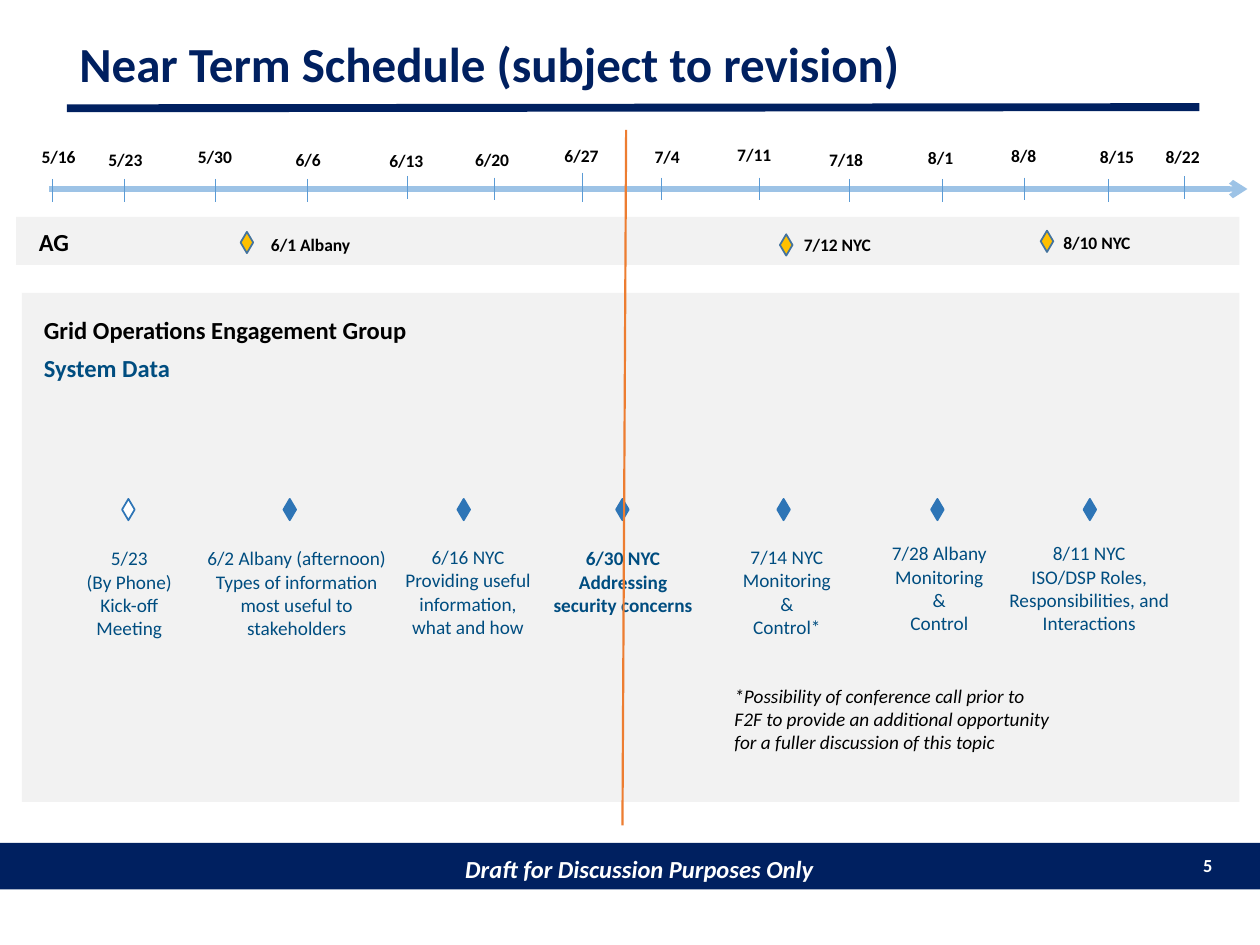
"""Build the near-term schedule slide with its timeline and engagement meetings."""
from dataclasses import dataclass

from lxml.etree import SubElement
from pptx import Presentation
from pptx.dml.color import RGBColor
from pptx.enum.shapes import MSO_CONNECTOR as Connector, MSO_SHAPE as Preset
from pptx.enum.text import MSO_ANCHOR as Anchor, MSO_AUTO_SIZE as AutoSize, PP_ALIGN as Align
from pptx.oxml.ns import qn
from pptx.util import Pt

COLORS = {
    "navy": "002060", "white": "FFFFFF", "black": "000000", "panel": "F2F2F2",
    "axis": "9DC3E6", "tick": "5B9BD5", "gold": "FFC000", "gold_edge": "43739E",
    "meeting": "2E75B6", "text": "004D80", "today": "ED7D31",
}
FONT = "Calibri"
DIAMOND_SIZE = (7.2, 12.2)
MEETING_TOP = 285.1


@dataclass(frozen=True)
class Style:
    size: float
    color: str = "black"
    bold: bool = False
    italic: bool = False
    align: Align = Align.CENTER


@dataclass(frozen=True)
class Week:
    date: str
    label_left: float
    label_top: float
    tick_x: float
    tick_top: float
    tick_height: float = 13


@dataclass(frozen=True)
class AdvisoryMeeting:
    label: str
    label_left: float
    label_top: float
    diamond_left: float
    diamond_top: float


@dataclass(frozen=True)
class GroupMeeting:
    lines: tuple[str, ...]
    left: float
    top: float
    diamond_left: float
    width: float = 130.3
    bold: bool = False
    fill: str = "meeting"


LABEL = Style(10, bold=True)
HEADING = Style(14, bold=True, align=Align.LEFT)

WEEKS = (
    Week("5/16", 15.1, 79.9, 30.2, 102.2),
    Week("5/23", 53.3, 81.4, 71.3, 102.2),
    Week("5/30", 104.4, 79.9, 123.1, 102.2),
    Week("6/6", 157.7, 81.4, 175.7, 102.2),
    Week("6/13", 213.8, 82.1, 232.6, 100.5),
    Week("6/20", 262.8, 81.4, 282.6, 101.5),
    Week("6/27", 313.9, 79.2, 332.6, 98.6, 16.6),
    Week("7/4", 362.9, 79.9, 378, 101.5),
    Week("7/11", 412.6, 78.5, 434.2, 101.5),
    Week("7/18", 465.1, 81.4, 485.3, 102.2),
    Week("8/1", 519.1, 80.6, 538.6, 102.2),
    Week("8/8", 566.6, 79.2, 585.4, 101.5),
    Week("8/15", 619.9, 79.9, 633.6, 102.2),
    Week("8/22", 657.4, 79.9, 676.8, 100.8),
)
ADVISORY_MEETINGS = (
    AdvisoryMeeting("6/1 Albany", 141.8, 130.3, 137.5, 132.5),
    AdvisoryMeeting("7/12 NYC", 442.8, 130.3, 445.7, 133.9),
    AdvisoryMeeting("8/10 NYC", 591.1, 128.9, 594.7, 131.8),
)
GROUP_MEETINGS = (
    GroupMeeting(("5/23", "(By Phone)", "Kick-off Meeting"), 38.2, 308.9, 69.8, 71.3, fill="white"),
    GroupMeeting(("6/2 Albany (afternoon)", "Types of information most useful to stakeholders"),
                 104.4, 308.9, 162),
    GroupMeeting(("6/16 NYC", "Providing useful information,", "what and how"), 202.3, 308.2, 261.4),
    GroupMeeting(("6/30 NYC", "Addressing", "security concerns"), 290.9, 308.9, 352.1, bold=True),
    GroupMeeting(("7/14 NYC", "Monitoring", "&", "Control*"), 384.5, 308.2, 444.2),
    GroupMeeting(("7/28 Albany", "Monitoring", "&", "Control"), 471.6, 306, 532.1),
    GroupMeeting(("8/11 NYC", "ISO/DSP Roles, Responsibilities, and Interactions"),
                 557.3, 306, 619.2),
)


def rgb(name: str) -> RGBColor:
    """Return the named colour."""
    return RGBColor.from_string(COLORS[name])


def write_text(shape, text: str, style: Style) -> None:
    """Fill a shape with text in one style."""
    frame = shape.text_frame
    frame.text = text
    frame.word_wrap = True
    for paragraph in frame.paragraphs:
        paragraph.alignment = style.align
        for run in paragraph.runs:
            font = run.font
            font.name, font.size = FONT, Pt(style.size)
            font.bold, font.italic = style.bold, style.italic
            font.color.rgb = rgb(style.color)


def add_text(slide, box: tuple, text: str, style: Style) -> None:
    """Add a text box given as left, top, width and height."""
    write_text(slide.shapes.add_textbox(*map(Pt, box)), text, style)


def add_block(slide, preset: Preset, box: tuple, fill: str, edge: str | None = None):
    """Add a filled preset shape with an optional outline."""
    shape = slide.shapes.add_shape(preset, *map(Pt, box))
    shape.shadow.inherit = False
    shape.fill.solid()
    shape.fill.fore_color.rgb = rgb(fill)
    if edge:
        shape.line.color.rgb = rgb(edge)
        shape.line.width = Pt(1)
    else:
        shape.line.fill.background()
    return shape


def add_diamond(slide, left: float, top: float, fill: str, edge: str) -> None:
    """Add a meeting marker."""
    add_block(slide, Preset.FLOWCHART_DECISION, (left, top, *DIAMOND_SIZE), fill, edge)


def add_line(slide, ends: tuple, color: str, width: float, arrow: bool = False) -> None:
    """Add a straight line given as start x, start y, end x and end y."""
    line = slide.shapes.add_connector(Connector.STRAIGHT, *map(Pt, ends))
    line.line.color.rgb = rgb(color)
    line.line.width = Pt(width)
    properties = line._element.spPr
    if arrow:
        SubElement(properties.find(qn("a:ln")), qn("a:tailEnd"), type="arrow")
    SubElement(properties, qn("a:effectLst"))


def add_frame(slide) -> None:
    """Add the title, its rule and the footer bar."""
    title = slide.shapes.title
    title.left, title.top, title.width, title.height = map(Pt, (38.2, 18, 647.3, 39.6))
    write_text(title, "Near Term Schedule (subject to revision)",
               Style(28, "navy", bold=True, align=Align.LEFT))
    title.text_frame.auto_size = AutoSize.NONE
    title.text_frame.vertical_anchor = Anchor.MIDDLE
    title.text_frame.paragraphs[0].line_spacing = 0.9
    add_line(slide, (38.2, 61.9, 685.4, 61.2), "navy", 4.5)
    footer = add_block(slide, Preset.RECTANGLE, (0, 481.7, 720, 26.6), "navy")
    write_text(footer, "Draft for Discussion Purposes Only",
               Style(14, "white", bold=True, italic=True))
    footer.text_frame.margin_left = Pt(18)
    footer.text_frame.vertical_anchor = Anchor.BOTTOM
    add_text(slide, (670.3, 484.6, 29.5, 20.9), "5",
             Style(10.5, "white", bold=True, align=Align.RIGHT))


def main() -> None:
    """Build and save the presentation."""
    presentation = Presentation()
    presentation.slide_width, presentation.slide_height = Pt(720), Pt(540)
    slide = presentation.slides.add_slide(presentation.slide_layouts[5])
    add_frame(slide)
    add_block(slide, Preset.RECTANGLE, (12.5, 167.4, 695.7, 290.9), "panel")
    add_block(slide, Preset.RECTANGLE, (9.2, 124, 699, 27.4), "panel")
    add_line(slide, (28.1, 108, 712.8, 108), "axis", 3, arrow=True)
    for week in WEEKS:
        add_line(slide, (week.tick_x, week.tick_top, week.tick_x, week.tick_top + week.tick_height),
                 "tick", 0.5)
        add_text(slide, (week.label_left, week.label_top, 36.7, 19.4), week.date, LABEL)
    add_text(slide, (15.1, 126, 37.4, 24.5), "AG", HEADING)
    for meeting in ADVISORY_MEETINGS:
        add_diamond(slide, meeting.diamond_left, meeting.diamond_top, "gold", "gold_edge")
        add_text(slide, (meeting.label_left, meeting.label_top, 71.3, 19.4), meeting.label, LABEL)
    add_text(slide, (18, 176.4, 254.9, 24.5), "Grid Operations Engagement Group", HEADING)
    add_text(slide, (18, 198, 95, 24.5), "System Data",
             Style(14, "text", bold=True, align=Align.LEFT))
    for meeting in GROUP_MEETINGS:
        add_diamond(slide, meeting.diamond_left, MEETING_TOP, meeting.fill, "meeting")
        add_text(slide, (meeting.left, meeting.top, meeting.width, 60.5),
                 "\n".join(meeting.lines), Style(11, "text", bold=meeting.bold))
    add_text(slide, (412.6, 387.4, 197.3, 47.5),
             "*Possibility of conference call prior to F2F to provide an additional opportunity "
             "for a fuller discussion of this topic", Style(11, italic=True, align=Align.LEFT))
    add_line(slide, (357.8, 74.2, 355.7, 471.6), "today", 1.25)
    presentation.save("out.pptx")


if __name__ == "__main__":
    main()
